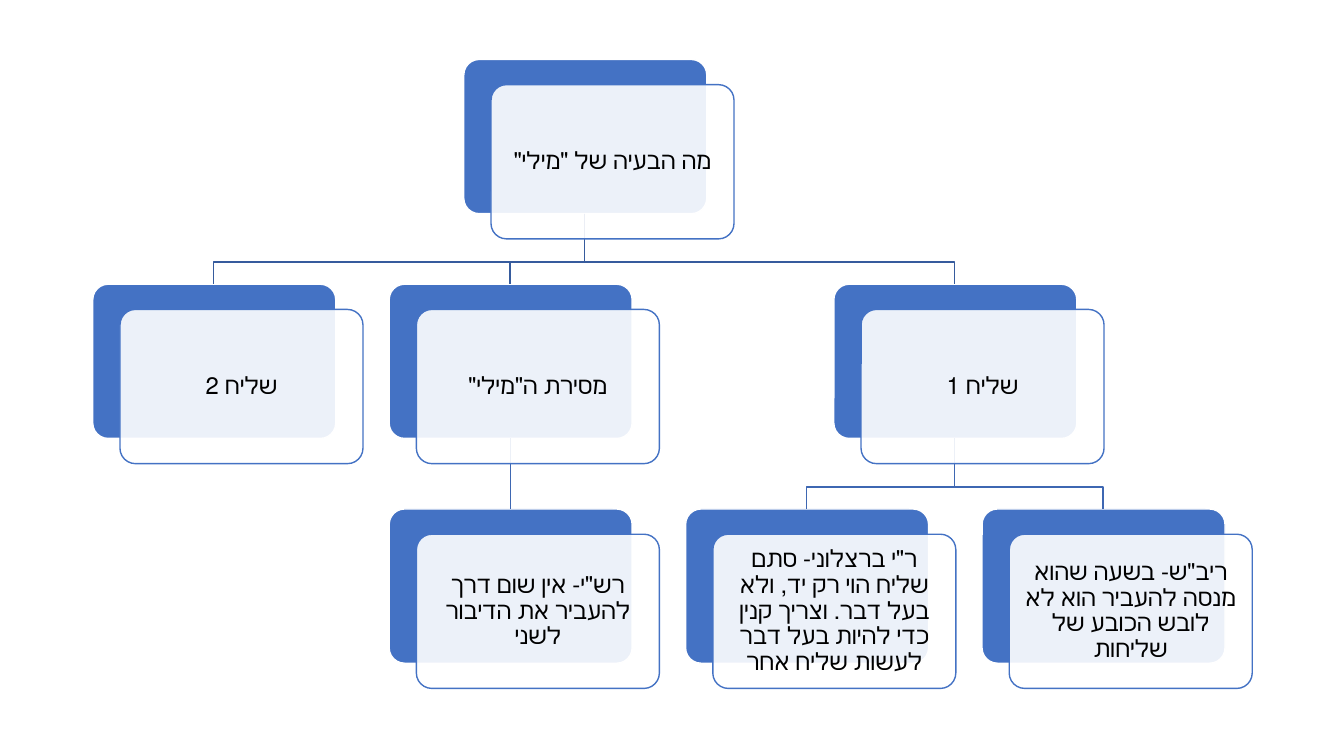
"""Build a right-to-left hierarchy slide of layered cards joined by branch lines."""
from dataclasses import dataclass
from typing import Optional

from lxml.etree import SubElement
from pptx import Presentation
from pptx.dml.color import RGBColor
from pptx.enum.lang import MSO_LANGUAGE_ID as Language
from pptx.enum.shapes import MSO_CONNECTOR as Connector, MSO_SHAPE as Preset
from pptx.enum.text import MSO_ANCHOR as Anchor, PP_ALIGN as Align
from pptx.oxml.ns import qn
from pptx.shapes.autoshape import Shape
from pptx.shapes.shapetree import SlideShapes
from pptx.util import Pt

PX = 9144
SLIDE_WIDTH, SLIDE_HEIGHT = 1333, 750
LEFT, TOP = 92, 59
COLUMN_STEP, ROW_STEP = 294, 223
CARD_WIDTH, CARD_HEIGHT = 241, 153
SHIFT_X, SHIFT_Y = 27, 25
BEND = 48
INSET = 7
FONT = "Calibri"
BLUE = RGBColor(0x44, 0x72, 0xC4)
WHITE = RGBColor(0xFF, 0xFF, 0xFF)
BLACK = RGBColor(0x00, 0x00, 0x00)
LINK_COLORS = (RGBColor(0x36, 0x5B, 0x9D), RGBColor(0x3E, 0x67, 0xB2))


@dataclass(frozen=True)
class Node:
    """A card placed by column and row, hanging from an optional parent."""
    text: str
    column: float
    row: int
    parent: Optional["Node"] = None

    @property
    def left(self) -> int:
        """Return the left edge of the back card."""
        return round(LEFT + self.column * COLUMN_STEP)

    @property
    def top(self) -> int:
        """Return the top edge of the back card."""
        return TOP + self.row * ROW_STEP

    @property
    def middle(self) -> int:
        """Return the horizontal middle of the back card."""
        return self.left + CARD_WIDTH // 2

    @property
    def bottom(self) -> int:
        """Return the bottom edge of the back card."""
        return self.top + CARD_HEIGHT


ROOT = Node('מה הבעיה של "מילי"', 1.25, 0)
AGENT_ONE = Node("שליח 1", 2.5, 1, ROOT)
HANDING = Node('מסירת ה"מילי"', 1, 1, ROOT)
AGENT_TWO = Node("שליח 2", 0, 1, ROOT)
NODES = (
    ROOT,
    AGENT_ONE,
    Node('ריב"ש- בשעה שהוא מנסה להעביר הוא לא לובש הכובע של שליחות',
         3, 2, AGENT_ONE),
    Node('ר"י ברצלוני- סתם שליח הוי רק יד, ולא בעל דבר. '
         'וצריך קנין כדי להיות בעל דבר לעשות שליח אחר', 2, 2, AGENT_ONE),
    HANDING,
    Node('רש"י- אין שום דרך להעביר את הדיבור לשני', 1, 2, HANDING),
    AGENT_TWO,
)


def add_card(shapes: SlideShapes, left: int, top: int,
             fill: RGBColor, line: RGBColor) -> Shape:
    """Draw one rounded card."""
    card = shapes.add_shape(Preset.ROUNDED_RECTANGLE, left * PX, top * PX,
                            CARD_WIDTH * PX, CARD_HEIGHT * PX)
    card.adjustments[0] = 0.1
    card.shadow.inherit = False
    card.fill.solid()
    card.fill.fore_color.rgb = fill
    card.line.color.rgb = line
    card.line.width = Pt(1)
    return card


def add_front(shapes: SlideShapes, node: Node) -> None:
    """Draw the translucent front card with its text."""
    card = add_card(shapes, node.left + SHIFT_X, node.top + SHIFT_Y, WHITE, BLUE)
    color = card.element.spPr.find(qn("a:solidFill")).find(qn("a:srgbClr"))
    SubElement(color, qn("a:alpha"), val="90000")
    frame = card.text_frame
    frame.word_wrap = True
    frame.vertical_anchor = Anchor.MIDDLE
    frame.margin_left = frame.margin_right = INSET * PX
    frame.margin_top = frame.margin_bottom = INSET * PX
    para = frame.paragraphs[0]
    para.alignment = Align.CENTER
    para.line_spacing = 0.9
    para.space_after = Pt(6)
    span = para.add_run()
    span.text = node.text
    span.font.name = FONT
    span.font.size = Pt(17)
    span.font.color.rgb = BLACK
    span.font.language_id = Language.HEBREW
    for properties in card.element.iter(qn("a:pPr")):
        properties.set("rtl", "1")


def add_link(shapes: SlideShapes, node: Node, backs: dict[Node, Shape]) -> None:
    """Join a card to its parent with a straight or bent line."""
    parent = node.parent
    if node.middle == parent.middle:
        link = shapes.add_connector(Connector.STRAIGHT, 0, 0, 0, 0)
        link.begin_connect(backs[parent], 2)
        link.end_connect(backs[node], 0)
        SubElement(link.element.spPr, qn("a:effectLst"))
    else:
        bend = parent.bottom + BEND
        outline = shapes.build_freeform(parent.middle, parent.bottom, PX)
        outline.add_line_segments(
            [(parent.middle, bend), (node.middle, bend), (node.middle, node.top)],
            close=False)
        link = outline.convert_to_shape()
        link.fill.background()
        link.shadow.inherit = False
    link.line.color.rgb = LINK_COLORS[parent.row]
    link.line.width = Pt(1)


def main() -> None:
    """Build and save the deck."""
    deck = Presentation()
    deck.slide_width, deck.slide_height = SLIDE_WIDTH * PX, SLIDE_HEIGHT * PX
    page = deck.slides.add_slide(deck.slide_layouts[6])
    backs = {node: add_card(page.shapes, node.left, node.top, BLUE, WHITE)
             for node in NODES}
    for node in NODES:
        if node.parent:
            add_link(page.shapes, node, backs)
    for node in NODES:
        add_front(page.shapes, node)
    deck.save("out.pptx")


if __name__ == "__main__":
    main()
